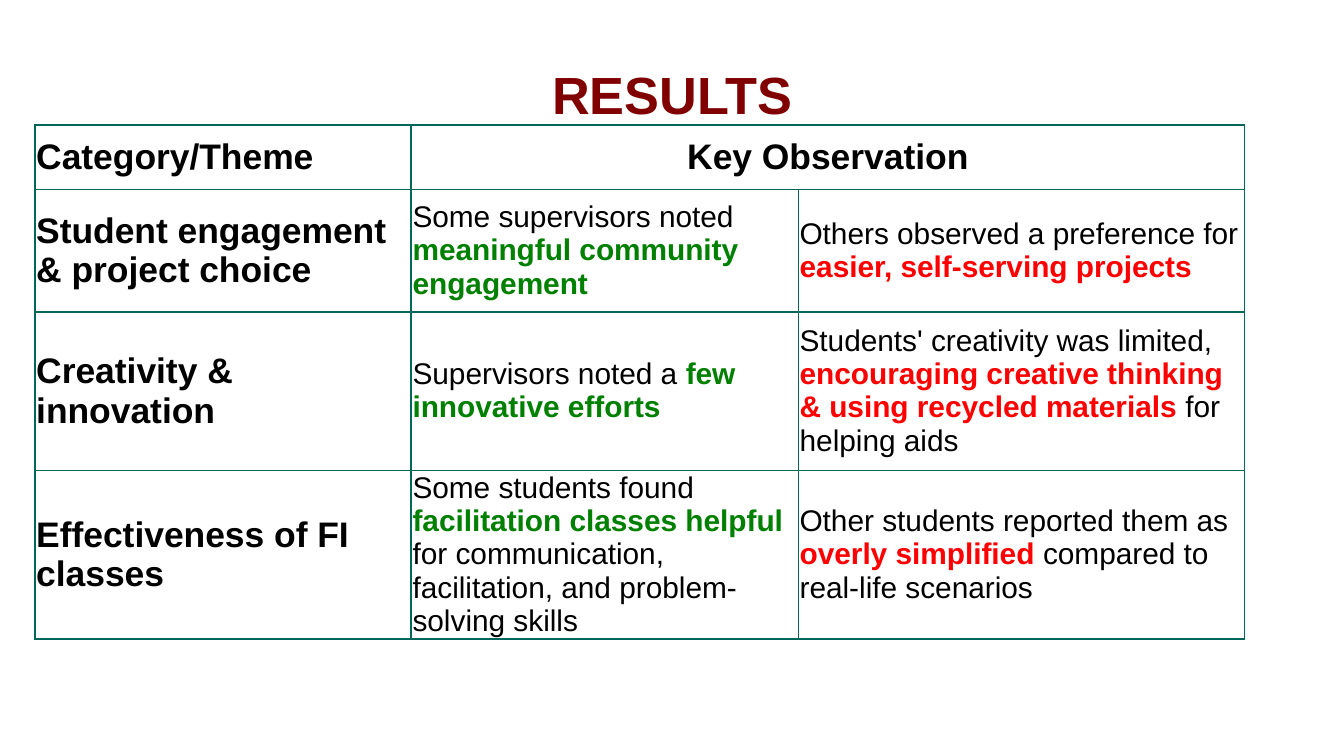
from lxml import etree
from pptx import Presentation
from pptx.dml.color import RGBColor
from pptx.enum import text
from pptx.oxml import ns
from pptx.util import Inches, Pt

FONT = "Arial"
BLACK, MAROON, GREEN, RED, TEAL = "000000", "800000", "008000", "FF0000", "00675A"

TITLE = "RESULTS"
HEADINGS = ["Category/Theme", "Key Observation"]
# Each observation is a list of paragraphs; *stars* mark the emphasised words.
ROWS = [
    ("Student engagement & project choice",
     ["Some supervisors noted *meaningful community engagement*"],
     ["Others observed a preference for *easier, self-serving projects*"]),
    ("Creativity & innovation",
     ["Supervisors noted a *few innovative efforts*"],
     ["Students' creativity was limited,",
      "*encouraging creative thinking & using recycled materials *for helping aids"]),
    ("Effectiveness of FI classes",
     ["Some students found *facilitation classes helpful *for communication, "
      "facilitation, and problem-solving skills"],
     ["Other students reported them as *overly simplified *compared to real-life scenarios"]),
]
COL_WIDTHS = [2.8, 2.88, 3.32]
ROW_HEIGHTS = [0.48, 0.91, 1.18, 1.18]


def rgb(value):
    return RGBColor.from_string(value)


def write(tf, paragraphs, size=16, bold=False, color=BLACK, accent=BLACK, align=None):
    """Fill a text frame; words between stars become bold in the accent colour."""
    for i, line in enumerate(paragraphs):
        p = tf.paragraphs[0] if i == 0 else tf.add_paragraph()
        p.alignment = align
        for j, part in enumerate(line.split("*")):
            if not part:
                continue
            marked = j % 2 == 1
            r = p.add_run()
            r.text = part
            r.font.name, r.font.size = FONT, Pt(size)
            r.font.bold = bold or marked
            r.font.color.rgb = rgb(accent if marked else color)


def format_cell(cell):
    """Set tight margins, middle anchor, teal borders and no fill."""
    cell.margin_left = cell.margin_right = Inches(0.01)
    cell.margin_top = cell.margin_bottom = Inches(0.01)
    cell.vertical_anchor = text.MSO_ANCHOR.MIDDLE
    props = cell._tc.get_or_add_tcPr()
    for side in ("lnL", "lnR", "lnT", "lnB"):
        line = etree.SubElement(props, ns.qn(f"a:{side}"), w=str(Pt(1)))
        fill = etree.SubElement(line, ns.qn("a:solidFill"))
        etree.SubElement(fill, ns.qn("a:srgbClr"), val=TEAL)
    cell.fill.background()


prs = Presentation()
prs.slide_width = Inches(10)
prs.slide_height = prs.slide_width * 9 // 16
s = prs.slides.add_slide(prs.slide_layouts[5])

title = s.shapes.title
title.left, title.top = Inches(0.5), Inches(0.23)
title.width, title.height = Inches(9), Inches(0.94)
title.text_frame.vertical_anchor = text.MSO_ANCHOR.MIDDLE
write(title.text_frame, [TITLE], size=28, bold=True, color=MAROON,
      align=text.PP_ALIGN.CENTER)

table = s.shapes.add_table(len(ROW_HEIGHTS), len(COL_WIDTHS), Inches(0.26), Inches(0.93),
                           Inches(sum(COL_WIDTHS)), Inches(sum(ROW_HEIGHTS))).table
table.first_row = table.horz_banding = False
for column, width in zip(table.columns, COL_WIDTHS):
    column.width = Inches(width)
for row, height in zip(table.rows, ROW_HEIGHTS):
    row.height = Inches(height)
for cell in table.iter_cells():
    format_cell(cell)

table.cell(0, 1).merge(table.cell(0, 2))
for col, (heading, align) in enumerate(zip(HEADINGS, (None, text.PP_ALIGN.CENTER))):
    write(table.cell(0, col).text_frame, [heading], size=19, bold=True, align=align)
for row, (theme, positive, negative) in enumerate(ROWS, start=1):
    write(table.cell(row, 0).text_frame, [theme], size=19, bold=True)
    write(table.cell(row, 1).text_frame, positive, accent=GREEN)
    write(table.cell(row, 2).text_frame, negative, accent=RED)

prs.save("out.pptx")
